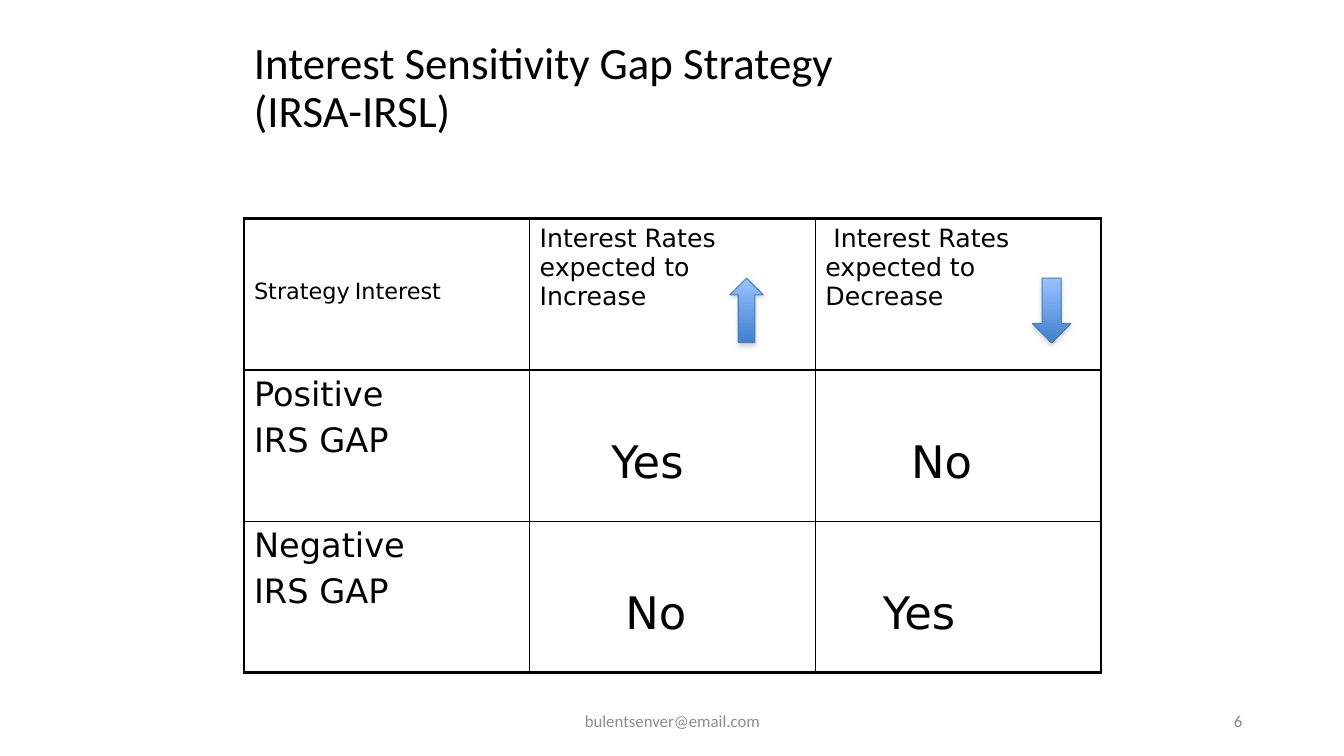
from lxml.etree import SubElement
from pptx import Presentation
from pptx.dml.color import RGBColor
from pptx.enum.shapes import MSO_SHAPE
from pptx.enum.text import MSO_ANCHOR, PP_ALIGN
from pptx.oxml import parse_xml
from pptx.oxml.ns import nsdecls, qn
from pptx.util import Inches, Pt

COLORS = {"ink": "000000", "footer": "8C8C8C", "number": "898989", "paper": "FFFFFF",
          "light": "9BC1FF", "deep": "3F80CD", "edge": "4A7EBB", "shade": "808080"}


def color(name):
    return RGBColor.from_string(COLORS[name])


class StrategySlide:
    """Builds the text, table and arrows of one slide in a shared style."""

    heading_font = "Calibri"
    table_font = "DejaVu Sans"
    thick, thin = 2.25, 1

    def __init__(self, deck):
        self.page = deck.slides.add_slide(deck.slide_layouts[6])

    def fill_paragraph(self, para, text, font, size, ink="ink", **formats):
        for name, value in formats.items():
            setattr(para, name, value)
        for index, line in enumerate(text.split("\n")):
            if index:
                para.add_line_break()
            span = para.add_run()
            span.text = line
            for name, value in {"name": font, "size": Pt(size)}.items():
                setattr(span.font, name, value)
            span.font.color.rgb = color(ink)

    def text(self, place, text, size, ink="ink", **formats):
        box = self.page.shapes.add_textbox(*map(Inches, place))
        for name, value in {"word_wrap": True, "vertical_anchor": MSO_ANCHOR.MIDDLE}.items():
            setattr(box.text_frame, name, value)
        self.fill_paragraph(box.text_frame.paragraphs[0], text, self.heading_font, size, ink,
                            **formats)

    def arrow(self, preset, place):
        arrow = self.page.shapes.add_shape(preset, *map(Inches, place))
        arrow.fill.gradient()
        arrow.fill.gradient_angle = 270
        for stop, name, position in zip(arrow.fill.gradient_stops, ("light", "deep"), (0, 1)):
            stop.color.rgb = color(name)
            stop.position = position
        arrow.line.color.rgb = color("edge")
        arrow.line.width = Pt(0.75)
        arrow.shadow.inherit = False
        effects = arrow._element.spPr.find(qn("a:effectLst"))
        effects.append(parse_xml(
            f'<a:outerShdw {nsdecls("a")} blurRad="{Pt(3.1)}" dist="{Pt(1.8)}" dir="5400000" '
            f'rotWithShape="0"><a:srgbClr val="{COLORS["shade"]}"><a:alpha val="35000"/>'
            '</a:srgbClr></a:outerShdw>'))

    def border(self, cell, widths):
        properties = cell._tc.get_or_add_tcPr()
        for index, (side, width) in enumerate(widths.items()):
            properties.insert(index, parse_xml(
                f'<a:ln{side} {nsdecls("a")} w="{Pt(width)}"><a:solidFill>'
                f'<a:srgbClr val="{COLORS["ink"]}"/></a:solidFill></a:ln{side}>'))

    def indent(self, para, left=0, first=0, tab=0):
        properties = para._p.get_or_add_pPr()
        properties.set("marL", str(Inches(left)))
        properties.set("indent", str(Inches(first)))
        if tab:
            stops = SubElement(properties, qn("a:tabLst"))
            SubElement(stops, qn("a:tab"), pos=str(Inches(tab)), algn="l")

    def table(self, place, rows):
        last_row, last_column = len(rows) - 1, len(rows[0]) - 1
        frame = self.page.shapes.add_table(last_row + 1, last_column + 1, *map(Inches, place))
        table = frame.table
        for name in ("first_row", "horz_banding"):
            setattr(table, name, False)
        for r, row in enumerate(rows):
            for c, (lines, size, top, indents) in enumerate(row):
                cell = table.cell(r, c)
                cell.margin_top = Inches(top)
                cell.fill.solid()
                cell.fill.fore_color.rgb = color("paper")
                outer = {"L": c == 0, "R": c == last_column, "T": r == 0, "B": r == last_row}
                self.border(cell, {side: self.thick if edge else self.thin
                                   for side, edge in outer.items()})
                for index, line in enumerate(lines):
                    frame_text = cell.text_frame
                    para = frame_text.add_paragraph() if index else frame_text.paragraphs[0]
                    self.fill_paragraph(para, line, self.table_font, size,
                                        space_before=Pt(5 if index else 0))
                    self.indent(para, **indents)


def answer(word, left):
    return [word], 32, 0.66, {"left": left}


def gap(kind):
    return [kind, "IRS GAP"], 24, 0.05, {}


def outlook(change, first=0):
    return [f"Interest Rates\nexpected to\n{change}"], 18, 0.05, {"first": first}


def main():
    deck = Presentation()
    deck.slide_width, deck.slide_height = Inches(13.33), Inches(7.5)
    slide = StrategySlide(deck)
    slide.text((4.42, 6.95, 4.5, 0.4), "bulentsenver@email.com", 12, "footer",
               alignment=PP_ALIGN.CENTER)
    slide.text((9.42, 6.95, 3, 0.4), "6", 12, "number", alignment=PP_ALIGN.RIGHT)
    slide.text((2.42, 0.34, 8.5, 1.09), "Interest Sensitivity Gap Strategy\n(IRSA-IRSL)", 32,
               line_spacing=0.9)
    slide.table((2.42, 2.17, 8.5, 4.5), [
        [(["Strategy\tInterest"], 16, 0.6, {"tab": 1.55}),
         outlook("Increase"), outlook("Decrease", 0.08)],
        [gap("Positive"), answer("Yes", 0.71), answer("No", 0.85)],
        [gap("Negative"), answer("No", 0.85), answer("Yes", 0.57)],
    ])
    slide.arrow(MSO_SHAPE.UP_ARROW, (7.24, 2.76, 0.33, 0.64))
    slide.arrow(MSO_SHAPE.DOWN_ARROW, (10.24, 2.76, 0.38, 0.64))
    deck.save("out.pptx")


if __name__ == "__main__":
    main()
